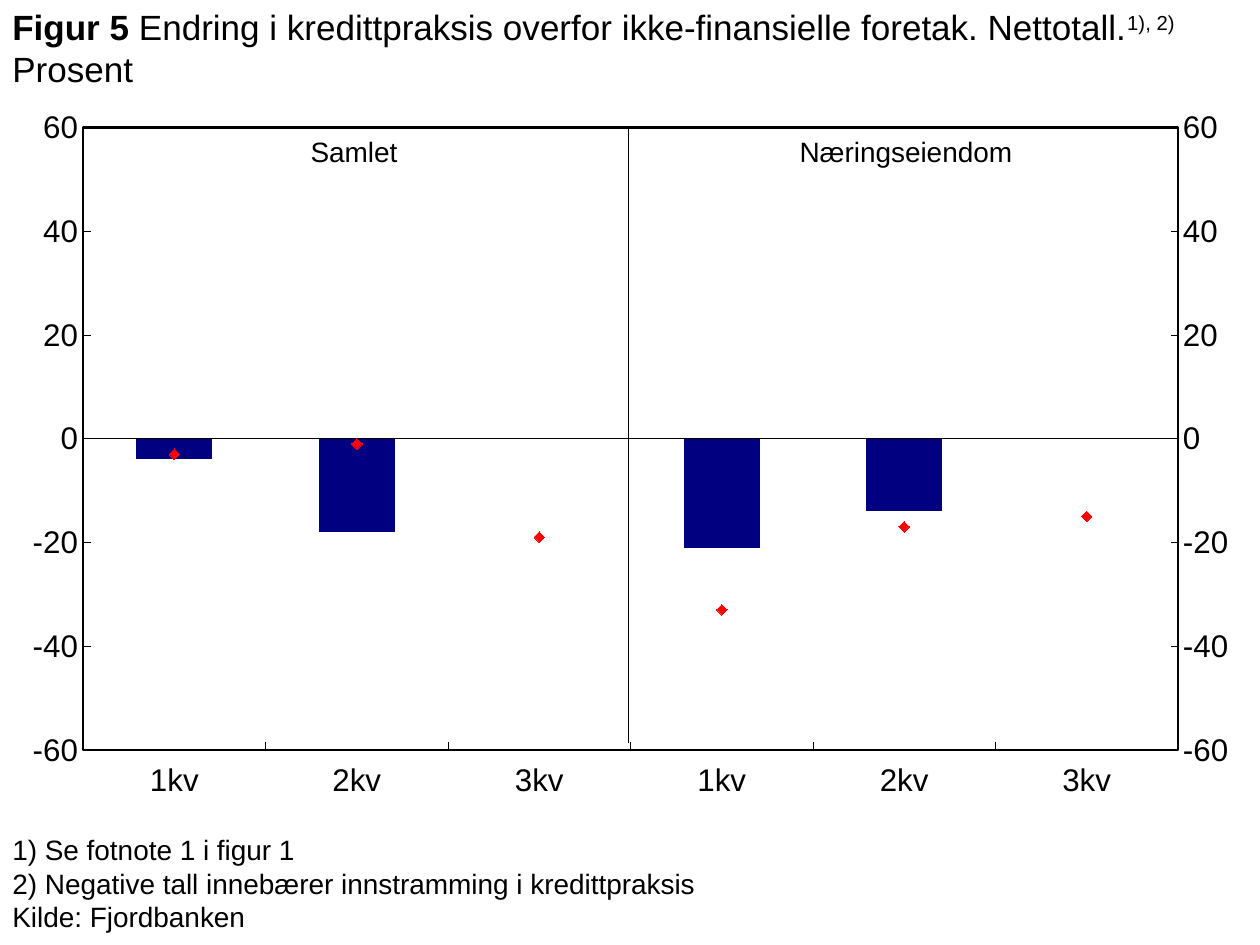
from copy import deepcopy

from lxml import etree
from pptx import Presentation
from pptx import util as u
from pptx.chart import data as cd
from pptx.dml import color
from pptx.enum import chart as ec, shapes, text
from pptx.oxml import parse_xml
from pptx.oxml.ns import nsdecls, qn

INK, NAVY, RED = "000000", "000080", "FF0000"
CATS = ["1kv", "2kv", "3kv"] * 2
GAP = [None] * 3
BARS = [[-4, -18, None] + GAP, GAP + [-21, -14, None]]
DOTS = [[-3, -1, -19] + GAP, GAP + [-33, -17, -15]]


def paint(part, tint):
    part.solid()
    part.fore_color.rgb = color.RGBColor.from_string(tint)


def style(font, size, bold=False):
    font.name, font.size, font.bold = "Arial", u.Pt(size), bold
    paint(font.fill, INK)


def stroke(line, width):
    paint(line.fill, INK)
    line.width = u.Pt(width)


def add_text(slide, box, paras, size, align=None, anchor=None, hang=0):
    frame = slide.shapes.add_textbox(*map(u.Inches, box)).text_frame
    frame.word_wrap = True
    frame.vertical_anchor = anchor
    for i, runs in enumerate(paras):
        para = frame.add_paragraph() if i else frame.paragraphs[0]
        para.alignment = align
        if hang:
            props = para._p.get_or_add_pPr()
            props.set("marL", str(u.Inches(hang)))
            props.set("indent", str(-u.Inches(hang)))
        for words, bold, raised in runs:
            run = para.add_run()
            run.text = words
            style(run.font, size, bold)
            if raised:
                run._r.get_or_add_rPr().set("baseline", "30000")


def add_line(slide, start, end):
    line = slide.shapes.add_connector(
        shapes.MSO_CONNECTOR.STRAIGHT, *map(u.Inches, start + end))
    stroke(line.line, 0.75)
    etree.SubElement(line._element.spPr, qn("a:effectLst"))


def set_axes(chart):
    cat, val = chart.category_axis, chart.value_axis
    val.minimum_scale, val.maximum_scale, val.major_unit = -60, 60, 20
    cat.tick_label_position = ec.XL_TICK_LABEL_POSITION.LOW
    for axis, tick in ((cat, ec.XL_TICK_MARK.NONE), (val, ec.XL_TICK_MARK.INSIDE)):
        axis.has_major_gridlines = False
        axis.major_tick_mark = tick
        axis.minor_tick_mark = ec.XL_TICK_MARK.NONE
        style(axis.tick_labels.font, 17.9)
        stroke(axis.format.line, 0.25)


def twin(axis, own, other, **values):
    new = deepcopy(axis)
    for tag, value in dict(values, axId=own, crossAx=other).items():
        new.find(qn("c:" + tag)).set("val", value)
    return new


def split_dots(chart):
    area = chart._chartSpace.chart.plotArea
    bar = area.find(qn("c:barChart"))
    line = parse_xml(
        f'<c:lineChart {nsdecls("c")}><c:grouping val="standard"/>'
        '<c:varyColors val="0"/><c:marker val="1"/>'
        '<c:axId val="901"/><c:axId val="902"/></c:lineChart>')
    end = line.find(qn("c:marker"))
    for ser in bar.findall(qn("c:ser"))[len(BARS):]:
        for flag in ser.findall(qn("c:invertIfNegative")):
            ser.remove(flag)
        end.addprevious(ser)
    bar.addnext(line)
    cat, val = area.find(qn("c:catAx")), area.find(qn("c:valAx"))
    right = twin(val, "902", "901", axPos="r", crosses="max")
    base = twin(cat, "901", "902", crosses="min",
                majorTickMark="in", tickLblPos="none")
    val.addnext(right)
    right.addnext(base)


def frame_plot(chart, x, y, w, h):
    area = chart._chartSpace.chart.plotArea
    for old in area.findall(qn("c:layout")):
        area.remove(old)
    spots = "".join(f'<c:{k} val="{v}"/>' for k, v in
                    dict(xMode="edge", yMode="edge", x=x, y=y, w=w, h=h).items())
    area.insert(0, parse_xml(
        f'<c:layout {nsdecls("c")}><c:manualLayout><c:layoutTarget val="inner"/>'
        f'{spots}</c:manualLayout></c:layout>'))
    area.append(parse_xml(
        f'<c:spPr {nsdecls("c", "a")}><a:noFill/><a:ln w="{u.Pt(1.5)}"><a:solidFill>'
        f'<a:srgbClr val="{INK}"/></a:solidFill></a:ln></c:spPr>'))


def add_chart(slide):
    data = cd.CategoryChartData()
    data.categories = CATS
    for i, vals in enumerate(BARS + DOTS, 1):
        data.add_series(f"Series {i}", vals)
    chart = slide.shapes.add_chart(
        ec.XL_CHART_TYPE.COLUMN_CLUSTERED,
        *map(u.Inches, (0, 0.86, 10, 5.88)), data).chart
    chart.has_title = chart.has_legend = False
    style(chart.font, 17.9)
    set_axes(chart)
    split_dots(chart)
    frame_plot(chart, 0.066, 0.026, 0.869, 0.84)
    bars, dots = chart.plots
    bars.gap_width, bars.overlap = 140, 100
    bars.vary_by_categories = False
    for ser in bars.series:
        ser.invert_if_negative = False
        paint(ser.format.fill, NAVY)
    for ser in dots.series:
        ser.smooth = False
        ser.format.line.fill.background()
        ser.marker.style, ser.marker.size = ec.XL_MARKER_STYLE.DIAMOND, 6
        paint(ser.marker.format.fill, RED)
        paint(ser.marker.format.line.fill, RED)


def main():
    deck = Presentation()
    deck.slide_width, deck.slide_height = u.Inches(10), u.Inches(7.5)
    slide = deck.slides.add_slide(deck.slide_layouts[6])
    add_chart(slide)
    notes = ["1) Se fotnote 1 i figur 1",
             "2) Negative tall innebærer innstramming i kredittpraksis",
             "Kilde: Fjordbanken"]
    add_text(slide, (0, 6.56, 8.44, 0.94),
             [[(note, False, False)] for note in notes], 16, hang=0.38)
    add_line(slide, (4.99, 5.9), (4.99, 1.02))
    for left, name in ((0.62, "Samlet"), (5, "Næringseiendom")):
        add_text(slide, (left, 1.02, 4.38, 0.37), [[(name, False, False)]], 16,
                 align=text.PP_ALIGN.CENTER)
    title = [("Figur 5 ", True, False),
             ("Endring i kredittpraksis overfor ikke-finansielle foretak. Nettotall.",
              False, False),
             ("1), 2)", False, True),
             (" Prosent", False, False)]
    add_text(slide, (0, 0, 9.74, 0.76), [title], 20, anchor=text.MSO_ANCHOR.MIDDLE)
    deck.save("out.pptx")


if __name__ == "__main__":
    main()
